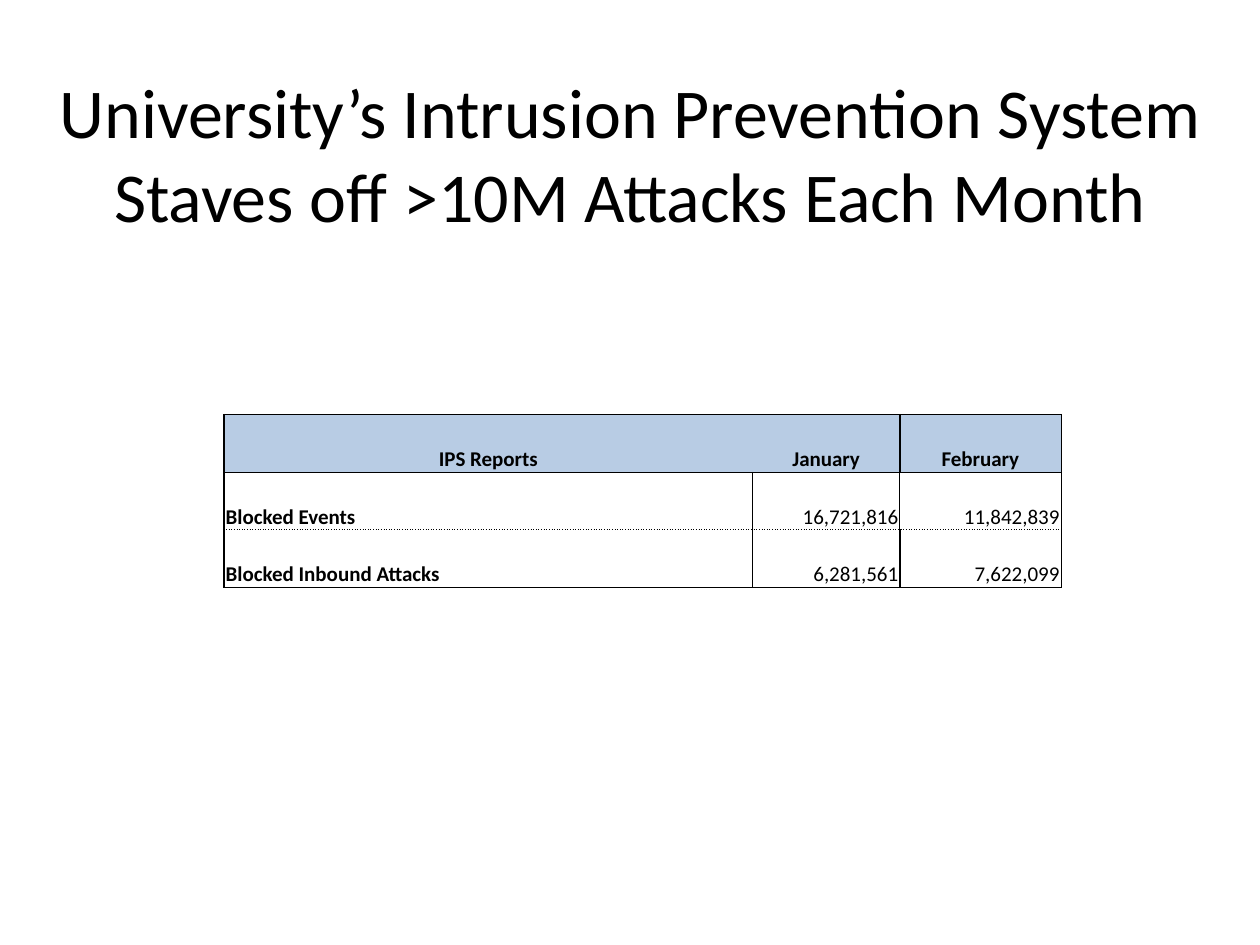
"""Build a slide with a title and a table of monthly IPS reports."""
from lxml.etree import SubElement as Sub
from pptx import Presentation
from pptx.dml.color import RGBColor
from pptx.enum.text import MSO_ANCHOR as Anchor, PP_ALIGN as Align
from pptx.oxml.ns import qn
from pptx.util import Cm, Pt

BLACK = RGBColor(0, 0, 0)
WHITE = RGBColor(255, 255, 255)
BLUE = RGBColor(0xB8, 0xCC, 0xE4)

TITLE = "University’s Intrusion Prevention System Staves off >10M Attacks Each Month"
ROWS = [
    ("IPS Reports", "", "January", "February"),
    ("Blocked Events", "", "16,721,816", "11,842,839"),
    ("Blocked Inbound Attacks", "", "6,281,561", "7,622,099"),
]
WIDTHS = [5.77, 4.88, 2.97, 3.25]
HEIGHT = 1.16

THIN, THICK, DOTS, NONE = (0.5, "solid"), (1, "solid"), (0.5, "sysDot"), None
ACROSS = [THICK, THIN, DOTS, THIN]
DOWN = [
    (THICK, NONE, THIN, THICK, THIN),
    (THICK, NONE, THIN, THIN, THIN),
    (THICK, NONE, THIN, THICK, THIN),
]
CELL = {
    "margin_left": Cm(0.03),
    "margin_right": Cm(0.03),
    "margin_top": Cm(0.03),
    "margin_bottom": 0,
    "vertical_anchor": Anchor.BOTTOM,
}


def style(item, values):
    for name, value in values.items():
        setattr(item, name, value)


def write(frame, text, align, size, bold=False):
    frame.text = text
    para = frame.paragraphs[0]
    para.alignment = align
    for run in para.runs:
        style(run.font, {"name": "Calibri", "size": Pt(size), "bold": bold})
        run.font.color.rgb = BLACK


def edge(cell, sides):
    props = cell._tc.get_or_add_tcPr()
    for spot, (side, kind) in enumerate(sides.items()):
        line = Sub(props, qn(f"a:ln{side}"))
        props.insert(spot, line)
        if kind is NONE:
            Sub(line, qn("a:noFill"))
            continue
        width, dash = kind
        line.set("w", str(Pt(width)))
        fill = Sub(line, qn("a:solidFill"))
        Sub(fill, qn("a:srgbClr")).set("val", str(BLACK))
        Sub(line, qn("a:prstDash")).set("val", dash)


def add_title(slide):
    title = slide.shapes.title
    style(title, {"left": 0, "top": Cm(0.97), "width": Cm(25.4), "height": Cm(4.22)})
    title.text_frame.vertical_anchor = Anchor.MIDDLE
    write(title.text_frame, TITLE, Align.CENTER, 40)


def add_grid(slide):
    box = slide.shapes.add_table(
        len(ROWS), len(WIDTHS), Cm(4.52), Cm(8.36),
        Cm(sum(WIDTHS)), Cm(HEIGHT * len(ROWS)))
    table = box.table
    style(table, {"first_row": False, "horz_banding": False})
    for col, width in zip(table.columns, WIDTHS):
        col.width = Cm(width)
    for r, texts in enumerate(ROWS):
        table.rows[r].height = Cm(HEIGHT)
        for c, text in enumerate(texts):
            cell = table.cell(r, c)
            style(cell, CELL)
            cell.fill.solid()
            cell.fill.fore_color.rgb = WHITE if r else BLUE
            edge(cell, {"L": DOWN[r][c], "R": DOWN[r][c + 1],
                        "T": ACROSS[r], "B": ACROSS[r + 1]})
            if text:
                align = Align.CENTER if r == 0 else Align.RIGHT if c else Align.LEFT
                write(cell.text_frame, text, align, 12, r == 0 or c == 0)
    table.cell(0, 0).merge(table.cell(0, 1))


def main():
    deck = Presentation()
    style(deck, {"slide_width": Cm(25.4), "slide_height": Cm(19.05)})
    slide = deck.slides.add_slide(deck.slide_layouts[5])
    add_title(slide)
    add_grid(slide)
    deck.save("out.pptx")


if __name__ == "__main__":
    main()
